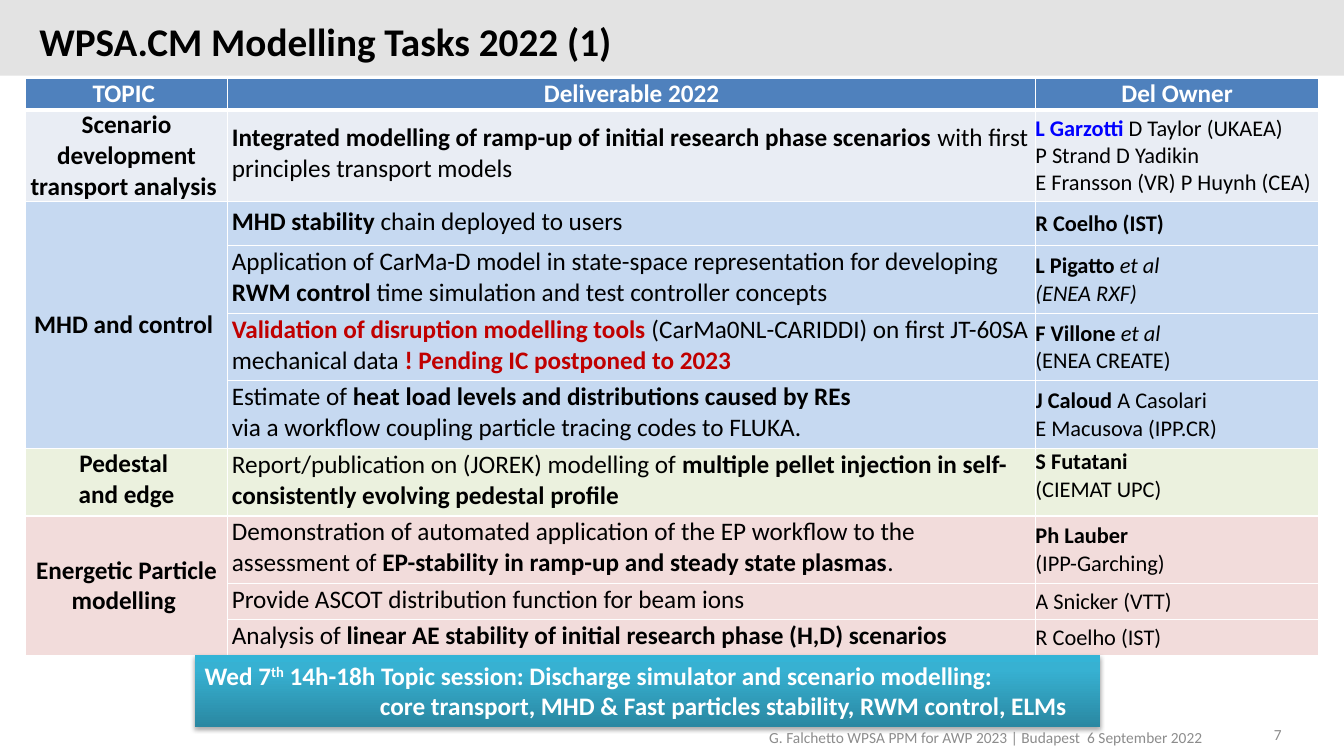
"""Build the WPSA.CM modelling tasks slide with its table of deliverables."""
import copy

import pptx
import pptx.dml.color
import pptx.enum.shapes
import pptx.enum.text
import pptx.oxml
import pptx.oxml.ns
import pptx.util

Inches = pptx.util.Inches
Pt = pptx.util.Pt
RGBColor = pptx.dml.color.RGBColor
Align = pptx.enum.text.PP_ALIGN
Anchor = pptx.enum.text.MSO_ANCHOR
qn = pptx.oxml.ns.qn

FONT = "Calibri"
BLACK = RGBColor(0x00, 0x00, 0x00)
WHITE = RGBColor(0xFF, 0xFF, 0xFF)
BAND_GREY = RGBColor(0xE3, 0xE3, 0xE3)
FOOTER_GREY = RGBColor(0x8C, 0x8C, 0x8C)
HEADER_BLUE = RGBColor(0x4F, 0x81, 0xBD)
SCENARIO_GREY = RGBColor(0xE9, 0xED, 0xF4)
MHD_BLUE = RGBColor(0xC6, 0xD9, 0xF1)
PEDESTAL_GREEN = RGBColor(0xEB, 0xF1, 0xDE)
PARTICLE_PINK = RGBColor(0xF2, 0xDC, 0xDB)
OWNER_BLUE = RGBColor(0x00, 0x00, 0xFF)
WARNING_RED = RGBColor(0xC0, 0x00, 0x00)
BANNER_STOPS = [(0, RGBColor(0x2A, 0x88, 0xA2)), (0.8, RGBColor(0x37, 0xB1, 0xD2)),
                (1, RGBColor(0x34, 0xB4, 0xD6))]

BOLD = {"bold": True}
ITALIC = {"italic": True}
RED = {"bold": True, "color": WARNING_RED}

HEADINGS = ["TOPIC ", "Deliverable 2022", "Del Owner"]
COLUMN_WIDTHS = [2.01, 8.01, 2.81]
ROW_HEIGHTS = [0.31, 0.91, 0.44, 0.67, 0.67, 0.67, 0.67, 0.67, 0.36, 0.36]
CELL_MARGINS = [(0, 0, 0, 0), (0.04, 0.01, 0.04, 0.05), (0, 0, 0, 0)]

TOPICS = [
    (["Scenario development transport analysis "], SCENARIO_GREY, Anchor.MIDDLE, [
        ([[("Integrated modelling of ramp-up of initial research phase scenarios ", BOLD),
           ("with first principles transport models", {})]],
         [[("L Garzotti ", {"bold": True, "color": OWNER_BLUE}), ("D Taylor (UKAEA)", {})],
          [("P Strand D Yadikin", {})], [("E Fransson (VR) P Huynh (CEA)", {})]]),
    ]),
    (["MHD and control "], MHD_BLUE, Anchor.MIDDLE, [
        ([[("MHD stability ", BOLD), ("chain deployed to users", {})]],
         [[("R Coelho (IST)", BOLD)]]),
        ([[("Application of CarMa-D model in state-space representation for developing ", {}),
           ("RWM control ", BOLD), ("time simulation and test controller concepts", {})]],
         [[("L Pigatto ", BOLD), ("et al", ITALIC)], [("(ENEA RXF)", ITALIC)]]),
        ([[("Validation of disruption modelling tools ", RED),
           ("(CarMa0NL-CARIDDI) on first JT-60SA mechanical data ", {}),
           ("! Pending IC postponed to 2023", RED)]],
         [[("F Villone ", BOLD), ("et al", ITALIC)], [("(ENEA CREATE)", {})]]),
        ([[("Estimate of ", {}), ("heat load levels and distributions caused by REs", BOLD)],
          [("via a workflow coupling particle tracing codes to FLUKA.", {})]],
         [[("J Caloud ", BOLD), ("A Casolari", {})], [("E Macusova (IPP.CR)", {})]]),
    ]),
    (["Pedestal ", "and edge"], PEDESTAL_GREEN, Anchor.TOP, [
        ([[("Report/publication on (JOREK) modelling of ", {}),
           ("multiple pellet injection in self-consistently evolving pedestal profile", BOLD)]],
         [[("S Futatani", BOLD)], [("(CIEMAT UPC)", {})]]),
    ]),
    (["Energetic Particle modelling "], PARTICLE_PINK, Anchor.MIDDLE, [
        ([[("Demonstration of automated application of the EP workflow to the assessment of ", {}),
           ("EP-stability in ramp-up and steady state plasmas", BOLD), (".", {})]],
         [[("Ph Lauber", BOLD)], [("(IPP-Garching)", {})]]),
        ([[("Provide ASCOT distribution function for beam ions", {})]],
         [[("A Snicker (VTT)", {})]]),
        ([[("Analysis of ", {}),
           ("linear AE stability of initial research phase (H,D) scenarios", BOLD)]],
         [[("R Coelho (IST)", {})]]),
    ]),
]


def add_run(paragraph, text, size=18, color=BLACK, bold=False, italic=False, raised=False):
    run = paragraph.add_run()
    run.text = text
    run.font.name = FONT
    run.font.size = Pt(size)
    run.font.color.rgb = color
    run.font.bold = bold
    run.font.italic = italic
    if raised:
        run.font._element.set("baseline", "30000")


class TaskSlide:
    def __init__(self, presentation):
        self.slide = presentation.slides.add_slide(presentation.slide_layouts[5])
        self.shapes = self.slide.shapes

    def fill_text(self, frame, paragraphs, align=Align.LEFT, **style):
        for index, runs in enumerate(paragraphs):
            paragraph = frame.add_paragraph() if index else frame.paragraphs[0]
            paragraph.alignment = align
            for text, emphasis in runs:
                add_run(paragraph, text, **{**style, **emphasis})

    def rectangle(self, left, top, width, height):
        shape = self.shapes.add_shape(pptx.enum.shapes.MSO_SHAPE.RECTANGLE, Inches(left),
                                      Inches(top), Inches(width), Inches(height))
        shape.shadow.inherit = False
        shape.line.fill.background()
        return shape

    def title(self, text):
        band = self.rectangle(0, 0, 13.33, 0.75)
        band.fill.solid()
        band.fill.fore_color.rgb = BAND_GREY
        self.shapes._spTree.insert(2, band._element)
        title = self.shapes.title
        title.left, title.top = Inches(0.29), Inches(0.22)
        title.width, title.height = Inches(11), Inches(0.5)
        title.text_frame.vertical_anchor = Anchor.MIDDLE
        self.fill_text(title.text_frame, [[(text, BOLD)]], size=28)
        title.text_frame.paragraphs[0].line_spacing = Pt(24)

    def footer(self, text, left, top, width, height):
        box = self.shapes.add_textbox(Inches(left), Inches(top), Inches(width), Inches(height))
        box.text_frame.word_wrap = True
        self.fill_text(box.text_frame, [[(text, {})]], Align.RIGHT, size=11, color=FOOTER_GREY)

    def cell(self, cell, paragraphs, fill, margins, anchor=Anchor.MIDDLE, bottom=1, **style):
        cell.margin_left, cell.margin_top, cell.margin_right, cell.margin_bottom = map(
            Inches, margins)
        cell.vertical_anchor = anchor
        properties = cell._tc.get_or_add_tcPr()
        for side, width in zip("LRTB", (1, 1, 1, bottom)):
            properties.append(pptx.oxml.parse_xml(
                f'<a:ln{side} {pptx.oxml.ns.nsdecls("a")} w="{Pt(width)}"><a:solidFill>'
                f'<a:srgbClr val="{WHITE}"/></a:solidFill></a:ln{side}>'))
        cell.fill.solid()
        cell.fill.fore_color.rgb = fill
        self.fill_text(cell.text_frame, paragraphs, **style)

    def task_table(self, left, top):
        table = self.shapes.add_table(
            len(ROW_HEIGHTS), len(COLUMN_WIDTHS), Inches(left), Inches(top),
            Inches(sum(COLUMN_WIDTHS)), Inches(sum(ROW_HEIGHTS))).table
        for column, width in zip(table.columns, COLUMN_WIDTHS):
            column.width = Inches(width)
        for row, height in zip(table.rows, ROW_HEIGHTS):
            row.height = Inches(height)
        for column, heading in enumerate(HEADINGS):
            self.cell(table.cell(0, column), [[(heading, BOLD)]], HEADER_BLUE, (0, 0, 0, 0),
                      bottom=3, align=Align.CENTER, color=WHITE)
        row = 1
        for topic, fill, anchor, tasks in TOPICS:
            first = row
            for deliverable, owner in tasks:
                names = [[(line, BOLD)] for line in topic] if row == first else []
                contents = [(names, Align.CENTER, 18), (deliverable, Align.LEFT, 18),
                            (owner, Align.LEFT, 16)]
                for column, (paragraphs, align, size) in enumerate(contents):
                    self.cell(table.cell(row, column), paragraphs, fill, CELL_MARGINS[column],
                              anchor, align=align, size=size)
                row += 1
            if len(tasks) > 1:
                table.cell(first, 0).merge(table.cell(row - 1, 0))

    def banner(self, paragraphs, left, top, width, height, indent):
        banner = self.rectangle(left, top, width, height)
        banner.fill.gradient()
        banner.fill.gradient_angle = 90
        properties = banner._element.spPr
        stops = properties.find(".//" + qn("a:gsLst"))
        stops.append(copy.deepcopy(stops[0]))
        for stop, (position, color) in zip(banner.fill.gradient_stops, BANNER_STOPS):
            stop.position = position
            stop.color.rgb = color
        properties.find(qn("a:effectLst")).append(pptx.oxml.parse_xml(
            f'<a:outerShdw {pptx.oxml.ns.nsdecls("a")} blurRad="{Pt(3.1)}" dist="{Pt(1.8)}" '
            'dir="5400000" rotWithShape="0"><a:srgbClr val="000000"><a:alpha val="35000"/>'
            '</a:srgbClr></a:outerShdw>'))
        frame = banner.text_frame
        frame.word_wrap = True
        frame.auto_size = pptx.enum.text.MSO_AUTO_SIZE.SHAPE_TO_FIT_TEXT
        frame.vertical_anchor = Anchor.TOP
        self.fill_text(frame, paragraphs, color=WHITE, bold=True)
        frame.paragraphs[1]._p.get_or_add_pPr().set("marL", str(Inches(indent)))


def main():
    presentation = pptx.Presentation()
    presentation.slide_width, presentation.slide_height = Inches(13.33), Inches(7.5)
    page = TaskSlide(presentation)
    page.title("WPSA.CM Modelling Tasks 2022 (1)")
    page.footer("G. Falchetto WPSA PPM for AWP 2023 | Budapest  6 September 2022",
                6.42, 7.17, 5.61, 0.36)
    page.footer("7", 12.02, 7.14, 0.79, 0.22)
    page.task_table(0.25, 0.78)
    page.banner([[("Wed 7", {}), ("th", {"raised": True}),
                  (" 14h-18h Topic session: Discharge simulator and scenario modelling:", {})],
                 [("core transport, MHD & Fast particles stability, RWM control, ELMs", {})]],
                1.93, 6.5, 8.98, 0.71, indent=1.74)
    presentation.save("out.pptx")


if __name__ == "__main__":
    main()
